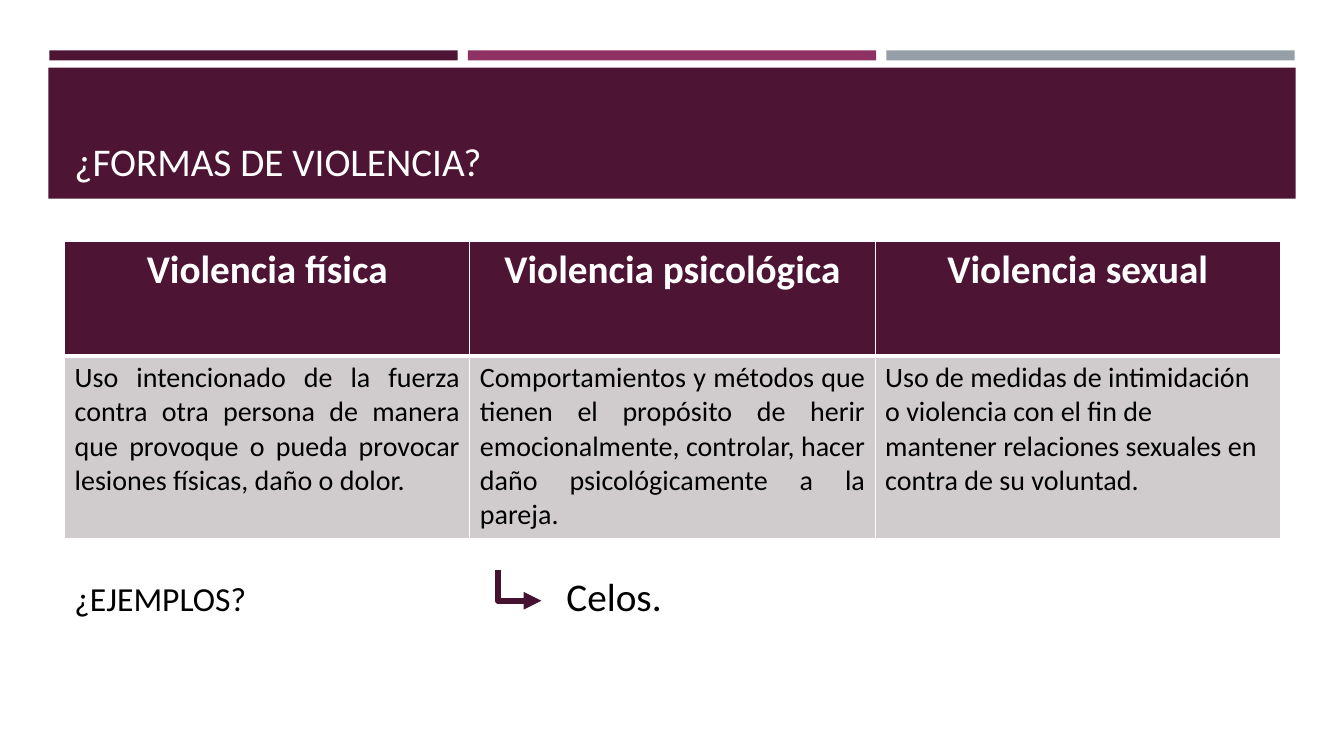
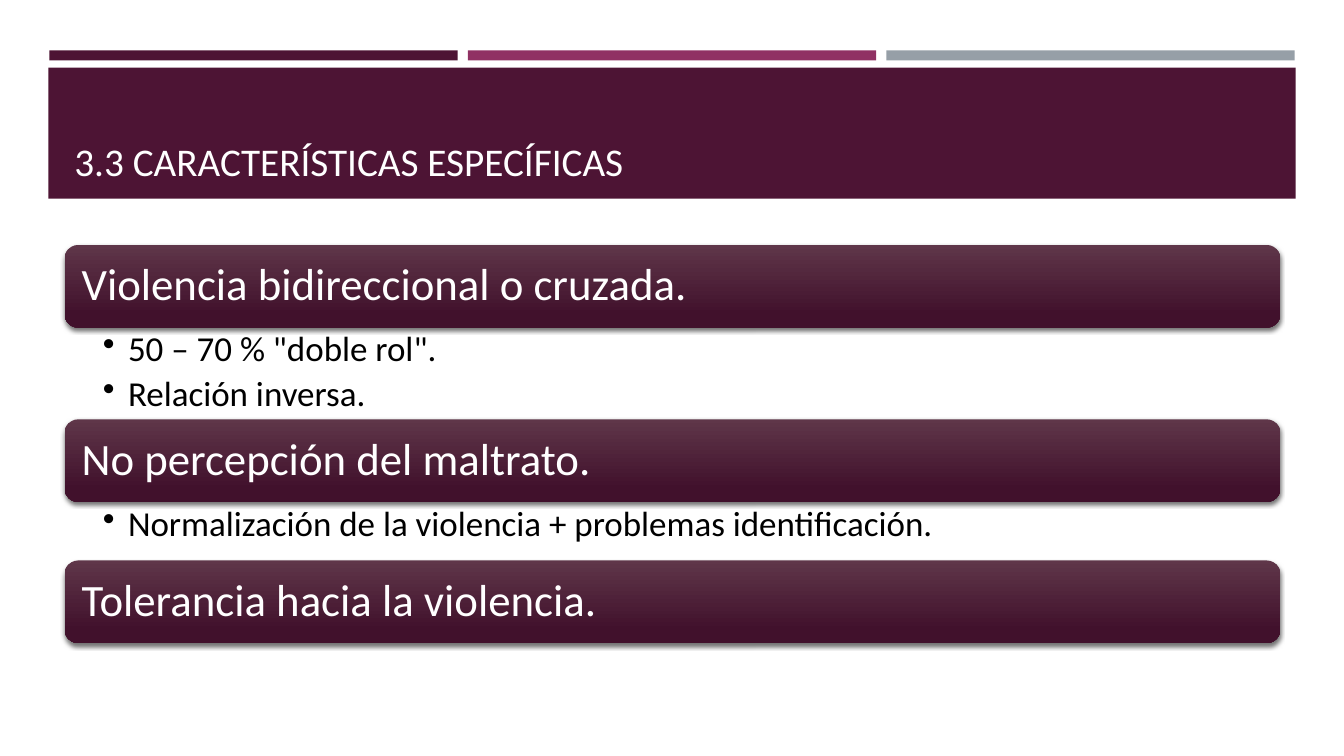
from lxml.etree import SubElement
from pptx import Presentation
from pptx.dml.color import RGBColor
from pptx.enum.shapes import MSO_CONNECTOR, MSO_SHAPE
from pptx.enum.text import MSO_ANCHOR, PP_ALIGN
from pptx.oxml import parse_xml
from pptx.oxml.ns import nsdecls, qn
from pptx.util import Inches, Pt

FONT = "Calibri"
COLORS = {
    "plum": "4D1434", "magenta": "903163", "gray": "969FA7",
    "cell": "D0CCCE", "arrow": "45122F", "white": "FFFFFF", "black": "000000",
    "bar_top": "5F3649", "bar_bottom": "41112C",
}
LEFT, WIDTH = 0.64, 12.06  # content column shared by both slides


def rgb(name):
    return RGBColor.from_string(COLORS[name])


def add_run(p, text, size, color, bold=False):
    r = p.add_run()
    r.text = text
    r.font.name, r.font.size, r.font.bold = FONT, Pt(size), bold
    r.font.color.rgb = rgb(color)


def add_box(slide, box, anchor=MSO_ANCHOR.TOP, insets=(0.1, 0.05, 0.1, 0.05)):
    tf = slide.shapes.add_textbox(*map(Inches, box)).text_frame
    tf.word_wrap = True
    tf.vertical_anchor = anchor
    (tf.margin_left, tf.margin_top,
     tf.margin_right, tf.margin_bottom) = map(Inches, insets)
    return tf


def add_label(slide, box, text, size, color="black", **frame):
    tf = add_box(slide, box, **frame)
    add_run(tf.paragraphs[0], text, size, color)
    return tf


def add_block(slide, kind, box):
    sp = slide.shapes.add_shape(kind, *map(Inches, box))
    sp.line.fill.background()
    sp.shadow.inherit = False
    return sp


def add_rect(slide, box, color):
    sp = add_block(slide, MSO_SHAPE.RECTANGLE, box)
    sp.fill.solid()
    sp.fill.fore_color.rgb = rgb(color)


def add_frame(prs, title):
    """New slide with the three strips and the title band."""
    slide = prs.slides.add_slide(prs.slide_layouts[6])
    for i, color in enumerate(("plum", "magenta", "gray")):
        add_rect(slide, (0.49 + i * 4.15, 0.5, 4.05, 0.1), color)
    add_rect(slide, (0.48, 0.67, 12.37, 1.3), "plum")
    add_label(slide, (LEFT, 0.77, WIDTH, 1.11), title, 28, "white",
              anchor=MSO_ANCHOR.BOTTOM)
    return slide


def set_borders(cell, bottom):
    tcPr = cell._tc.get_or_add_tcPr()
    widths = {"lnL": 1, "lnR": 1, "lnT": 1, "lnB": bottom}
    for i, (tag, width) in enumerate(widths.items()):
        tcPr.insert(i, parse_xml(
            f'<a:{tag} {nsdecls("a")} w="{Pt(width)}"><a:solidFill>'
            f'<a:srgbClr val="{COLORS["white"]}"/></a:solidFill></a:{tag}>'))


def add_forms_table(slide, box, columns, heights):
    """Columns of (heading, description, alignment of the description)."""
    table = slide.shapes.add_table(2, len(columns), *map(Inches, box)).table
    table.horz_banding = False
    for row, height in zip(table.rows, heights):
        row.height = Inches(height)
    for c, (heading, description, align) in enumerate(columns):
        table.columns[c].width = Inches(box[2] / len(columns))
        looks = (
            (heading, PP_ALIGN.CENTER, 28, "white", True, "plum", 3),
            (description, align, 20, "black", False, "cell", 1),
        )
        for r, (text, al, size, color, bold, fill, bottom) in enumerate(looks):
            cell = table.cell(r, c)
            cell.fill.solid()
            cell.fill.fore_color.rgb = rgb(fill)
            set_borders(cell, bottom)
            p = cell.text_frame.paragraphs[0]
            p.alignment = al
            add_run(p, text, size, color, bold)


def add_elbow_arrow(slide, box):
    """Arrow that goes down the left edge, then right along the bottom."""
    x, y, w, h = box
    cx = slide.shapes.add_connector(
        MSO_CONNECTOR.ELBOW, *map(Inches, (x, y, x + w, y + h)))
    cx.line.color.rgb = rgb("arrow")
    cx.line.width = Pt(4.25)
    spPr = cx._element.spPr
    guides = spPr.find(qn("a:prstGeom")).get_or_add_avLst()
    SubElement(guides, qn("a:gd"), name="adj1", fmla="val 0")
    SubElement(cx.line._get_or_add_ln(), qn("a:tailEnd"), type="triangle")
    SubElement(spPr, qn("a:effectLst"))


def add_bar(slide, box, text):
    """Rounded gradient bar with a soft shadow and its heading."""
    x, y, w, h = box
    sp = add_block(slide, MSO_SHAPE.ROUNDED_RECTANGLE, box)
    sp.fill.gradient()
    sp.fill.gradient_angle = 270
    stops = (("bar_top", 0), ("bar_bottom", 0.84))
    for stop, (color, position) in zip(sp.fill.gradient_stops, stops):
        stop.color.rgb = rgb(color)
        stop.position = position
    sp._element.spPr.find(qn("a:effectLst")).append(parse_xml(
        f'<a:outerShdw {nsdecls("a")} blurRad="{Pt(3)}" dist="{Pt(2)}" '
        f'dir="5400000" rotWithShape="0"><a:srgbClr val="{COLORS["black"]}">'
        '<a:alpha val="55000"/></a:srgbClr></a:outerShdw>'))
    tf = add_label(slide, (x + 0.04, y + 0.04, w - 0.08, h - 0.08), text, 32,
                   "white", anchor=MSO_ANCHOR.MIDDLE, insets=(0.13,) * 4)
    tf.paragraphs[0].line_spacing = 0.9


def add_bullets(slide, box, items):
    tf = add_box(slide, box, insets=(0.38, 0.04, 0.25, 0.04))
    for i, item in enumerate(items):
        p = tf.add_paragraph() if i else tf.paragraphs[0]
        p.line_spacing, p.space_after = 0.9, Pt(5)
        pPr = p._p.get_or_add_pPr()
        pPr.set("marL", str(Inches(0.25)))
        pPr.set("indent", str(-Inches(0.25)))
        SubElement(pPr, qn("a:buChar"), char="•")
        add_run(p, item, 25, "black")


def build_forms(prs):
    slide = add_frame(prs, "¿FORMAS DE VIOLENCIA?")
    columns = (
        ("Violencia física",
         "Uso intencionado de la fuerza contra otra persona de manera que "
         "provoque o pueda provocar lesiones físicas, daño o dolor.",
         PP_ALIGN.JUSTIFY),
        ("Violencia psicológica",
         "Comportamientos y métodos que tienen el propósito de herir "
         "emocionalmente, controlar, hacer daño psicológicamente a la pareja.",
         PP_ALIGN.JUSTIFY),
        ("Violencia sexual",
         "Uso de medidas de intimidación o violencia con el fin de mantener "
         "relaciones sexuales en contra de su voluntad.",
         PP_ALIGN.LEFT),
    )
    add_forms_table(slide, (LEFT, 2.39, WIDTH, 2.95), columns, (1.14, 1.81))
    # Example row
    add_label(slide, (LEFT, 5.68, 3.93, 0.5), "¿EJEMPLOS?", 24)
    add_elbow_arrow(slide, (4.94, 5.65, 0.43, 0.31))
    add_label(slide, (5.52, 5.63, 1.99, 0.57), "Celos.", 28)


def build_features(prs):
    slide = add_frame(prs, "3.3 CARACTERÍSTICAS ESPECÍFICAS")
    # Heading, its bullets and the height they take
    sections = (
        ("Violencia bidireccional o cruzada.",
         ('50 – 70 % "doble rol".', "Relación inversa."), 0.91),
        ("No percepción del maltrato.",
         ("Normalización de la violencia + problemas identificación.",), 0.58),
        ("Tolerancia hacia la violencia.", (), 0),
    )
    y, bar_height = 2.43, 0.82
    for heading, items, height in sections:
        add_bar(slide, (LEFT, y, WIDTH, bar_height), heading)
        y += bar_height
        if items:
            add_bullets(slide, (LEFT, y, WIDTH, height), items)
            y += height


def main():
    prs = Presentation()
    prs.slide_width, prs.slide_height = Inches(13.33), Inches(7.5)
    build_forms(prs)
    build_features(prs)
    prs.save("out.pptx")


if __name__ == "__main__":
    main()
